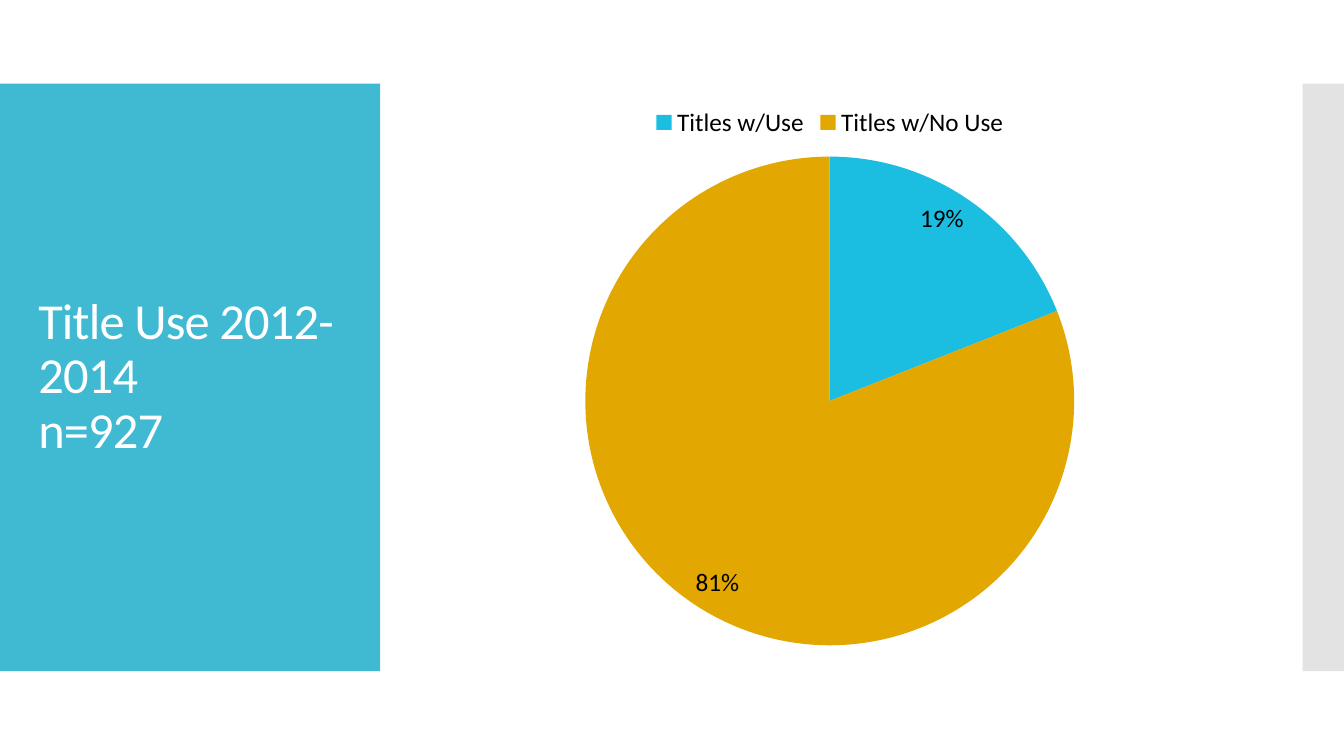
import dataclasses

import pptx
import pptx.chart.data
import pptx.dml.color
import pptx.enum.chart
import pptx.enum.shapes
import pptx.enum.text
import pptx.oxml
import pptx.oxml.ns
import pptx.slide
import pptx.util

Inches = pptx.util.Inches
RGBColor = pptx.dml.color.RGBColor

TURQUOISE = RGBColor(0x40, 0xBA, 0xD2)
GRAY = RGBColor(0xC8, 0xC8, 0xC8)
BRIGHT_BLUE = RGBColor(0x1B, 0xBD, 0xE0)
GOLD = RGBColor(0xE2, 0xA7, 0x00)
WHITE = RGBColor(0xFF, 0xFF, 0xFF)
BLACK = RGBColor(0x00, 0x00, 0x00)

TITLE_FONT = {"name": "Calibri", "size": pptx.util.Pt(36)}
CHART_FONT = {"name": "Calibri", "size": pptx.util.Pt(18)}
TITLE_FRAME = {
    "vertical_anchor": pptx.enum.text.MSO_ANCHOR.MIDDLE,
    "word_wrap": True,
    "auto_size": pptx.enum.text.MSO_AUTO_SIZE.NONE,
}
TITLE_PARAGRAPH = {
    "alignment": pptx.enum.text.PP_ALIGN.LEFT,
    "line_spacing": 0.9,
    "space_before": pptx.util.Pt(0),
}
LEGEND = {
    "position": pptx.enum.chart.XL_LEGEND_POSITION.TOP,
    "include_in_layout": False,
}
SHARE_LABELS = {
    "show_percentage": True,
    "show_value": False,
    "number_format": "0%",
    "number_format_is_linked": False,
    "position": pptx.enum.chart.XL_LABEL_POSITION.INSIDE_END,
}


@dataclasses.dataclass(frozen=True)
class Band:
    left: float
    width: float
    color: RGBColor
    opacity: int = 100


@dataclasses.dataclass(frozen=True)
class Share:
    label: str
    percent: int
    color: RGBColor


BANDS = [Band(0, 3.77, TURQUOISE), Band(12.92, 0.42, GRAY, 50)]
SHARES = [
    Share("Titles w/Use", 19, BRIGHT_BLUE),
    Share("Titles w/No Use", 81, GOLD),
]


def apply_format(target: object, values: dict) -> None:
    for attribute, value in values.items():
        setattr(target, attribute, value)


def draw_band(slide: pptx.slide.Slide, band: Band) -> None:
    panel = slide.shapes.add_shape(
        pptx.enum.shapes.MSO_SHAPE.RECTANGLE,
        Inches(band.left), Inches(0.83), Inches(band.width), Inches(5.83),
    )
    panel.shadow.inherit = False
    panel.line.fill.background()
    panel.fill.solid()
    panel.fill.fore_color.rgb = band.color
    if band.opacity < 100:
        color = panel.element.spPr.find(".//" + pptx.oxml.ns.qn("a:srgbClr"))
        alpha = pptx.oxml.parse_xml(
            f'<a:alpha {pptx.oxml.ns.nsdecls("a")} val="{band.opacity * 1000}"/>'
        )
        color.append(alpha)


def write_title(slide: pptx.slide.Slide) -> None:
    title = slide.shapes.title
    apply_format(title, {
        "left": Inches(0.28), "top": Inches(1.23),
        "width": Inches(3.22), "height": Inches(5.03),
    })
    apply_format(title.text_frame, TITLE_FRAME)
    heading = title.text_frame.paragraphs[0]
    heading.text = "Title Use 2012-2014\vn=927"
    apply_format(heading, TITLE_PARAGRAPH)
    for line in heading.runs:
        apply_format(line.font, TITLE_FONT)
        line.font.color.rgb = WHITE
    for properties in title.element.iter(pptx.oxml.ns.qn("a:rPr")):
        properties.set("spc", "-60")
    title.element.getparent().append(title.element)


def draw_use_chart(slide: pptx.slide.Slide, shares: list[Share]) -> None:
    title_use = pptx.chart.data.CategoryChartData()
    title_use.categories = [share.label for share in shares]
    title_use.add_series("Series 1", [share.percent for share in shares])
    pie = slide.shapes.add_chart(
        pptx.enum.chart.XL_CHART_TYPE.PIE,
        Inches(4.23), Inches(0.94), Inches(8), Inches(5.6), title_use,
    ).chart
    pie.has_title = False
    apply_format(pie.font, CHART_FONT)
    pie.font.color.rgb = BLACK
    pie.has_legend = True
    apply_format(pie.legend, LEGEND)
    plot = pie.plots[0]
    plot.vary_by_categories = True
    plot.has_data_labels = True
    apply_format(plot.data_labels, SHARE_LABELS)
    for index, share in enumerate(shares):
        wedge = plot.series[0].points[index].format
        wedge.fill.solid()
        wedge.fill.fore_color.rgb = share.color
        wedge.line.fill.background()


def main() -> None:
    deck = pptx.Presentation()
    apply_format(deck, {"slide_width": Inches(13.33), "slide_height": Inches(7.5)})
    slide = deck.slides.add_slide(deck.slide_layouts.get_by_name("Title Only"))
    for band in BANDS:
        draw_band(slide, band)
    write_title(slide)
    draw_use_chart(slide, SHARES)
    deck.save("out.pptx")


if __name__ == "__main__":
    main()
